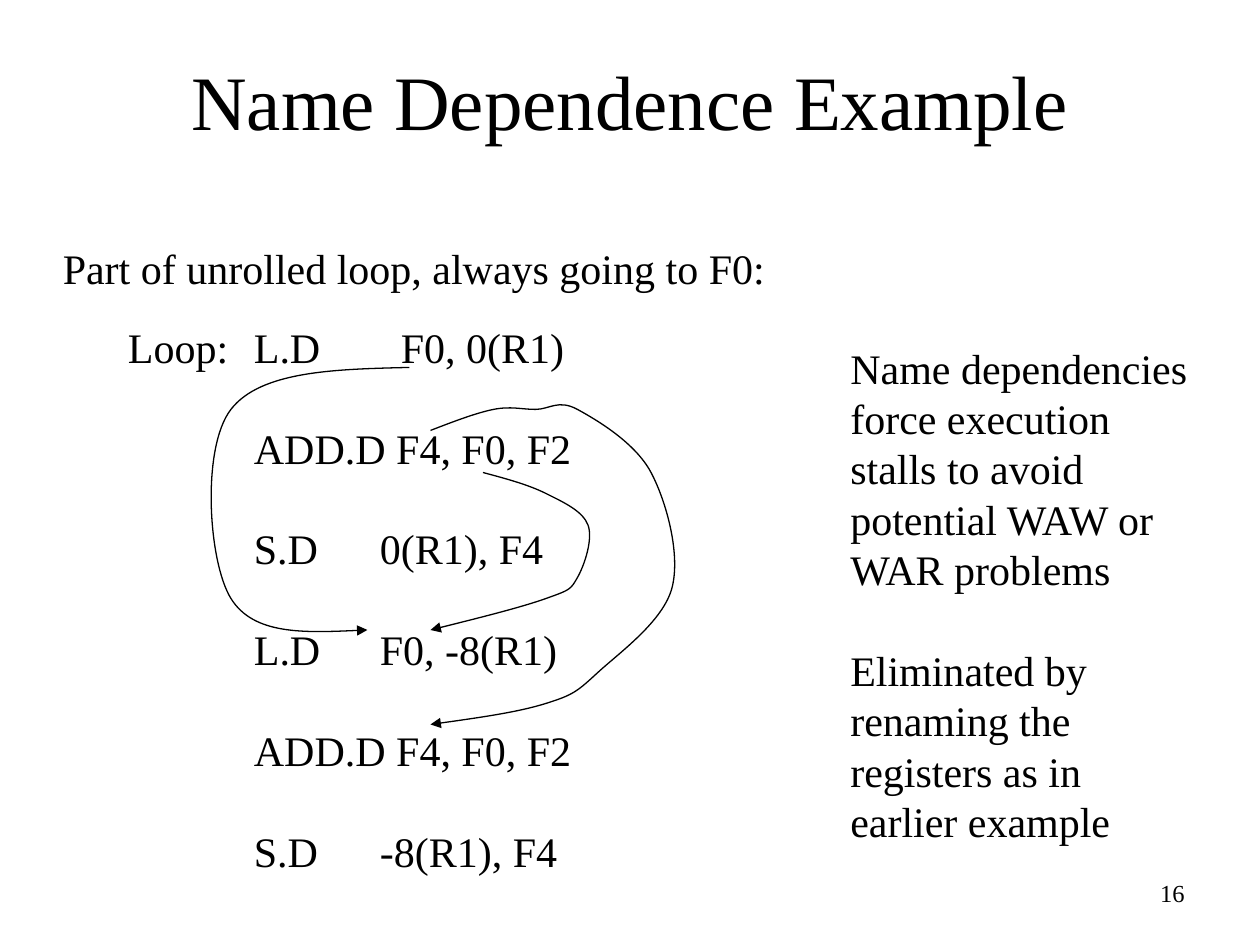
from lxml import etree
from pptx import Presentation
from pptx.dml.color import RGBColor
from pptx.enum.text import MSO_ANCHOR, PP_ALIGN
from pptx.oxml.ns import qn
from pptx.util import Inches, Pt

LEFT, CENTER, RIGHT = PP_ALIGN.LEFT, PP_ALIGN.CENTER, PP_ALIGN.RIGHT
TOP, MIDDLE = MSO_ANCHOR.TOP, MSO_ANCHOR.MIDDLE
COLORS = {"ink": "000000"}
INK = RGBColor.from_string(COLORS["ink"])
FONT = "Times New Roman"
LEADING = 1.2

prs = Presentation()
prs.slide_width, prs.slide_height = Inches(10), Inches(7.5)
CELL = prs.slide_width // 120
s = prs.slides.add_slide(prs.slide_layouts[6])


def add_text(box, lines, size=24, align=LEFT, anchor=TOP):
    sp = s.shapes.add_textbox(*(round(v * CELL) for v in box))
    tf = sp.text_frame
    tf.word_wrap = True
    tf.vertical_anchor = anchor
    tf.text = "\n".join(lines)
    for i, p in enumerate(tf.paragraphs):
        p.alignment = align
        p.line_spacing = Pt(size * LEADING)
        p.space_before = Pt(size * LEADING if i else 0)
        for r in p.runs:
            r.font.name, r.font.size, r.font.color.rgb = FONT, Pt(size), INK
    return tf


def curve_points(knots):
    slopes = [((c[0] - a[0]) / 6, (c[1] - a[1]) / 6) for a, c in zip(knots, knots[2:])]
    points = [knots[0]]
    for i, (a, d) in enumerate(zip(knots, knots[1:])):
        b = [a[k] + slopes[i - 1][k] for k in (0, 1)] if i else None
        c = [d[k] - slopes[i][k] for k in (0, 1)] if i < len(slopes) else None
        b = b or [(a[k] + c[k]) / 2 for k in (0, 1)]
        c = c or [(b[k] + d[k]) / 2 for k in (0, 1)]
        points += [b, c, d]
    return [(x * CELL, y * CELL) for x, y in points]


add_text((89, 83, 25, 6), ["16"], size=14, align=RIGHT)
add_text((9, 2, 102, 15), ["Name Dependence Example"], size=44, align=CENTER, anchor=MIDDLE)
add_text((4.8, 22.5, 70, 6), ["Part of unrolled loop, always going to F0:"])

code = add_text((11, 30, 51, 57), [
    "Loop:\tL.D\tF0, 0(R1)",
    "\tADD.D F4, F0, F2",
    "\tS.D\t0(R1), F4",
    "\tL.D\tF0, -8(R1)",
    "\tADD.D F4, F0, F2",
    "\tS.D\t-8(R1), F4",
])
for i, p in enumerate(code.paragraphs):
    tabs = etree.SubElement(p._p.get_or_add_pPr(), qn("a:tabLst"))
    for stop in (12, 24 if i else 26):
        etree.SubElement(tabs, qn("a:tab"), pos=str(stop * CELL), algn="l")

arrows = [
    [(39, 35), (22, 39), (22, 57), (35, 60)],
    [(46, 45), (52, 47), (56, 50), (55, 55), (52, 57), (41, 60)],
    [(41, 41), (47, 39), (51, 39), (55, 39), (62, 45), (64, 56), (57, 64), (52, 67), (41, 69)],
]
for knots in arrows:
    points = curve_points(knots)
    builder = s.shapes.build_freeform(*points[0])
    builder.add_line_segments(points[1:], close=False)
    sp = builder.convert_to_shape()
    sp.shadow.inherit = False
    sp.fill.background()
    sp.line.color.rgb = INK
    sp.line.width = Pt(0.75)
    etree.SubElement(sp.line._get_or_add_ln(), qn("a:tailEnd"), type="triangle")
    segments = list(sp._element.iter(qn("a:lnTo")))
    outline = segments[0].getparent()
    for i in range(0, len(segments), 3):
        bend = etree.SubElement(outline, qn("a:cubicBezTo"))
        for segment in segments[i:i + 3]:
            bend.append(segment[0])
            outline.remove(segment)

add_text((79.8, 32, 35.2, 49), [
    "Name dependencies force execution stalls to avoid potential WAW or WAR problems",
    "Eliminated by renaming the registers as in earlier example",
])

prs.save("out.pptx")
